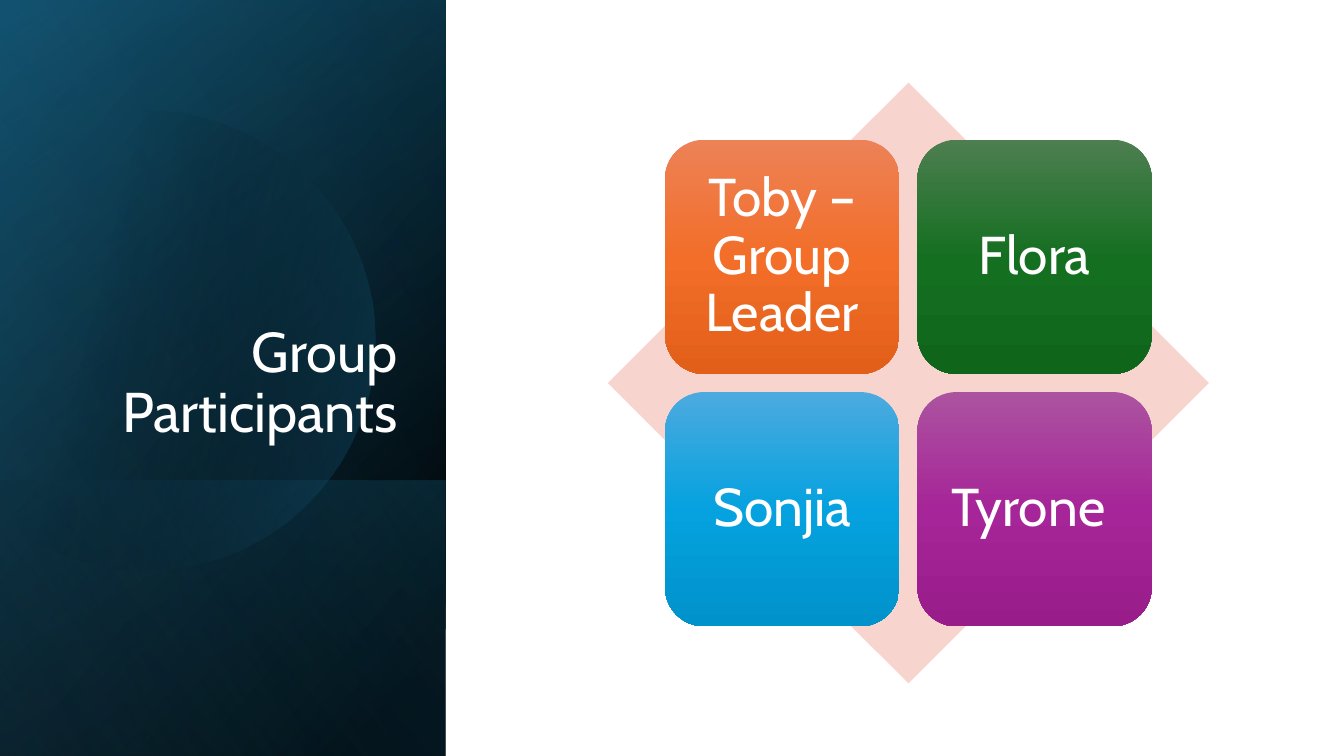
import math

from pptx import Presentation, oxml, util as u
from pptx.dml.color import RGBColor
from pptx.enum import shapes, text
from pptx.oxml import ns

FONT = "Cabin"
WHITE = RGBColor(0xFF, 0xFF, 0xFF)
BLACK = RGBColor(0x00, 0x00, 0x00)
NAVY = RGBColor(0x10, 0x48, 0x62)
TEAL = RGBColor(0x15, 0x60, 0x82)
SKY = RGBColor(0x46, 0xB1, 0xE1)
BLUSH = RGBColor(0xF7, 0xD5, 0xCE)
ORANGES = [RGBColor.from_string(c) for c in ("ED8257", "F26E29", "E25F1A")]
GREENS = [RGBColor.from_string(c) for c in ("4D7E50", "156F21", "0F661B")]
BLUES = [RGBColor.from_string(c) for c in ("4CAADF", "05A2DF", "0092CB")]
PURPLES = [RGBColor.from_string(c) for c in ("AC53A0", "A62598", "991C8B")]

PARTICIPANTS = [
    ("Toby – Group Leader", ORANGES),
    ("Flora", GREENS),
    ("Sonjia", BLUES),
    ("Tyrone ", PURPLES),
]


def strip_effects(shape):
    shape.shadow.inherit = False
    shape.line.fill.background()


def fill_gradient(shape, stops, angle):
    stop_xml = "".join(
        f'<a:gs pos="{position * 1000}"><a:srgbClr val="{color}">'
        f'<a:alpha val="{opacity * 1000}"/></a:srgbClr></a:gs>'
        for position, color, opacity in stops
    )
    gradient = oxml.parse_xml(
        f'<a:gradFill {ns.nsdecls("a")} rotWithShape="1"><a:gsLst>{stop_xml}</a:gsLst>'
        f'<a:lin ang="{angle * 60000}" scaled="0"/></a:gradFill>'
    )
    shape.fill.gradient()
    properties = shape._element.spPr
    properties.replace(properties.find(ns.qn("a:gradFill")), gradient)


def format_text(shape, wording, size, alignment, anchor):
    frame = shape.text_frame
    frame.text = wording
    frame.word_wrap = True
    frame.auto_size = text.MSO_AUTO_SIZE.NONE
    frame.vertical_anchor = anchor
    paragraph = frame.paragraphs[0]
    paragraph.alignment = alignment
    paragraph.line_spacing = 0.9
    font = paragraph.runs[0].font
    font.name, font.size = FONT, u.Pt(size)
    font.color.rgb = WHITE


def add_turned_layer(slide, left, top, width, height, stops, angle):
    layer = slide.shapes.add_shape(
        shapes.MSO_SHAPE.RECTANGLE,
        u.Inches(left + (width - height) / 2),
        u.Inches(top + (height - width) / 2),
        u.Inches(height),
        u.Inches(width),
    )
    layer.rotation = 90
    layer._element.spPr.find(ns.qn("a:xfrm")).set("flipH", "1")
    strip_effects(layer)
    fill_gradient(layer, stops, angle)


def add_cut_circle(slide, left, top, width, height):
    radius = height * 0.304
    center_x, center_y = left + width * 0.326, top + height * 0.451
    reach = math.acos((left - center_x) / radius)
    steps = 120
    angles = [reach * (2 * step / steps - 1) for step in range(steps + 1)]
    points = [
        (u.Inches(center_x + radius * math.cos(a)), u.Inches(center_y + radius * math.sin(a)))
        for a in angles
    ]
    builder = slide.shapes.build_freeform(*points[0])
    builder.add_line_segments(points[1:], close=True)
    circle = builder.convert_to_shape()
    strip_effects(circle)
    fill_gradient(circle, [(29, BLACK, 0), (100, TEAL, 43)], 14)


def add_title_panel(slide, left, top, width, height):
    panel = (left, top, width, height)
    add_turned_layer(slide, *panel, [(8, BLACK, 100), (100, NAVY, 100)], 50)
    add_turned_layer(slide, *panel, [(0, BLACK, 0), (99, TEAL, 46)], 30)
    foot = height * 0.365
    add_turned_layer(slide, left, top + height - foot, width, foot,
                     [(2, TEAL, 29), (100, BLACK, 30)], 130)
    add_cut_circle(slide, *panel)
    add_turned_layer(slide, *panel, [(0, BLACK, 0), (99, SKY, 11)], 120)

    title = slide.shapes.title
    title.left, title.top = u.Inches(left + width * 0.145), u.Inches(top + height * 0.245)
    title.width, title.height = u.Inches(width * 0.77), u.Inches(height * 0.35)
    format_text(title, "Group Participants", 40, text.PP_ALIGN.RIGHT, text.MSO_ANCHOR.BOTTOM)
    slide.shapes._spTree.append(title._element)


def add_participant_matrix(slide, left, top, side):
    diamond = slide.shapes.add_shape(
        shapes.MSO_SHAPE.DIAMOND, *map(u.Inches, (left, top, side, side))
    )
    strip_effects(diamond)
    diamond.fill.solid()
    diamond.fill.fore_color.rgb = BLUSH

    margin, pitch, tile_side = side * 0.095, side * 0.42, side * 0.39
    for index, (name, colors) in enumerate(PARTICIPANTS):
        row, column = divmod(index, 2)
        tile = slide.shapes.add_shape(
            shapes.MSO_SHAPE.ROUNDED_RECTANGLE,
            u.Inches(left + margin + column * pitch),
            u.Inches(top + margin + row * pitch),
            u.Inches(tile_side),
            u.Inches(tile_side),
        )
        strip_effects(tile)
        fill_gradient(tile, [(50 * i, color, 100) for i, color in enumerate(colors)], 90)
        format_text(tile, name, 38, text.PP_ALIGN.CENTER, text.MSO_ANCHOR.MIDDLE)
        frame = tile.text_frame
        frame.margin_left = frame.margin_right = u.Inches(0.16)
        frame.margin_top = frame.margin_bottom = u.Inches(0.16)


def main():
    presentation = Presentation()
    presentation.slide_width, presentation.slide_height = u.Inches(13.33), u.Inches(7.5)
    slide = presentation.slides.add_slide(presentation.slide_layouts[5])
    add_title_panel(slide, 0, 0, 4.42, 7.5)
    add_participant_matrix(slide, 6.03, 0.82, 5.96)
    presentation.save("out.pptx")


if __name__ == "__main__":
    main()
